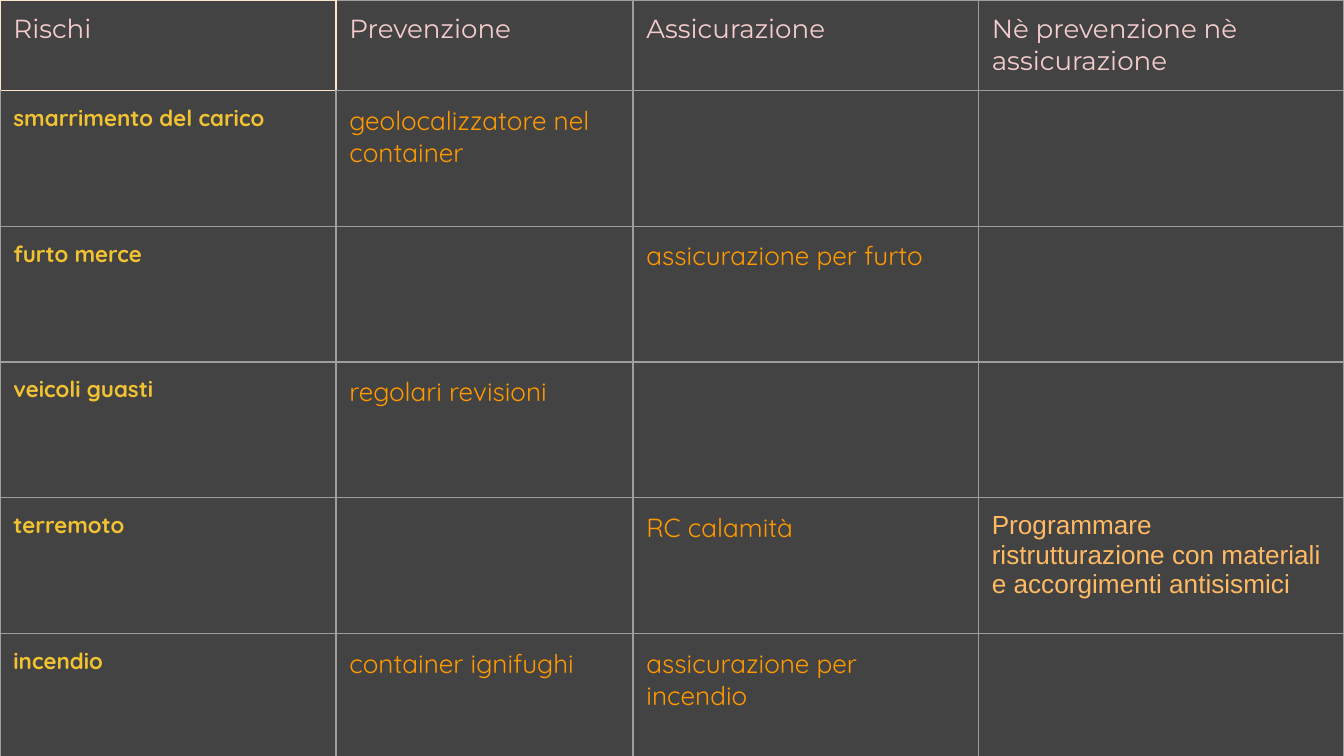
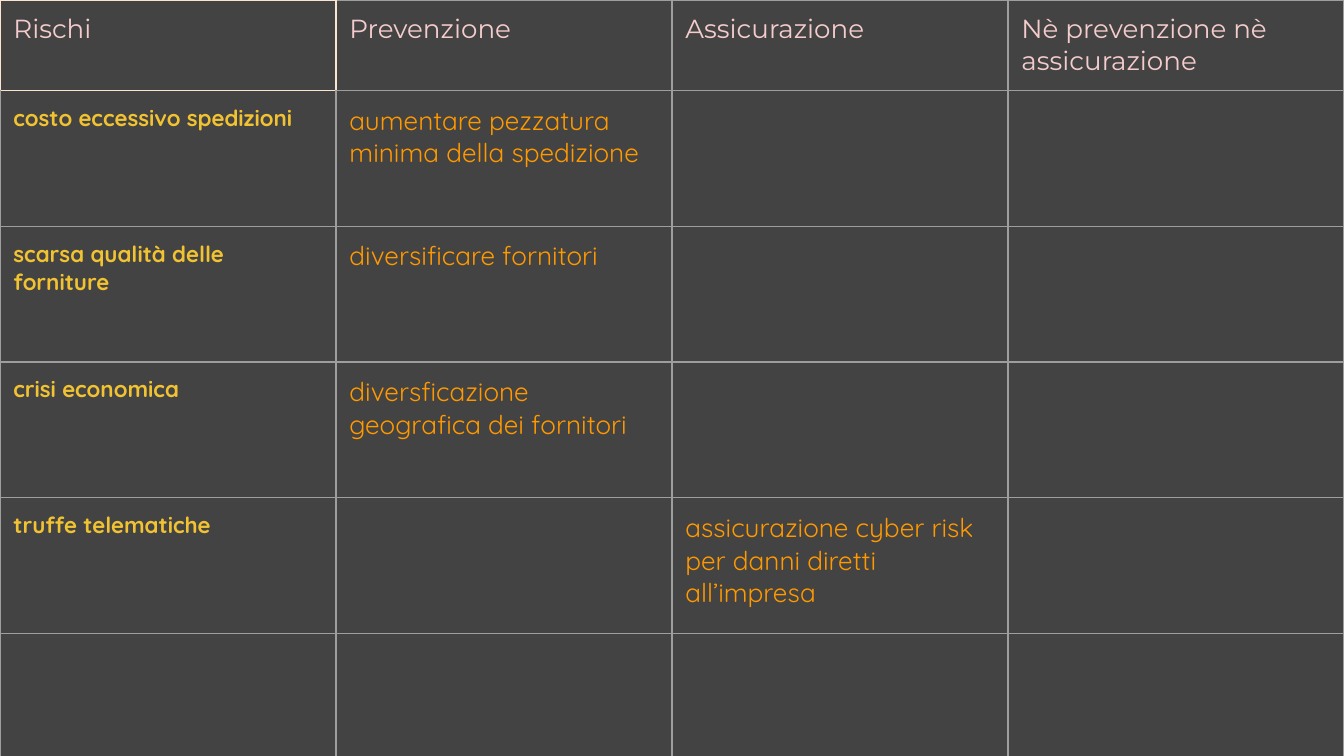
from lxml import etree
from pptx import Presentation
from pptx import util as u
from pptx.dml.color import RGBColor
from pptx.oxml import ns

# Shared look
CHARCOAL = RGBColor(0x43, 0x43, 0x43)
GREY = RGBColor(0x9E, 0x9E, 0x9E)
CREAM = RGBColor(0xFC, 0xE5, 0xCD)
PINK = RGBColor(0xF4, 0xCC, 0xCC)
GOLD = RGBColor(0xF1, 0xC2, 0x32)
ORANGE = RGBColor(0xFF, 0x99, 0x00)
APRICOT = RGBColor(0xFF, 0xBA, 0x64)

HEADING = ({"name": "Montserrat", "size": u.Pt(14), "bold": False}, PINK)
RISK = ({"name": "Quicksand", "size": u.Pt(12), "bold": True}, GOLD)
MEASURE = ({"name": "Quicksand", "size": u.Pt(14), "bold": False}, ORANGE)
NEITHER = ({"name": "Arial", "size": u.Pt(14), "bold": False}, APRICOT)
COLUMN_STYLES = (RISK, MEASURE, MEASURE, NEITHER)

SLIDE_WIDTH = u.Inches(10)
SLIDE_HEIGHT = SLIDE_WIDTH * 9 // 16
HEADER_HEIGHT = u.Inches(0.62)
RISK_HEIGHT = u.Inches(1.01)
PADDING = u.Inches(0.1)
BORDER_WIDTH = u.Pt(0.75)

# Content: risk, prevention, insurance, neither
HEADINGS = ("Rischi", "Prevenzione", "Assicurazione",
            "Nè prevenzione nè assicurazione")
LOGISTICS_RISKS = (
    ("smarrimento del carico", "geolocalizzatore nel container", "", ""),
    ("furto merce", "", "assicurazione per furto", ""),
    ("veicoli guasti", "regolari revisioni", "", ""),
    ("terremoto", "", "RC calamità",
     "Programmare ristrutturazione con materiali e accorgimenti antisismici"),
    ("incendio", "container ignifughi", "assicurazione per incendio", ""),
)
BUSINESS_RISKS = (
    ("costo eccessivo spedizioni",
     "aumentare pezzatura minima della spedizione", "", ""),
    ("scarsa qualità delle forniture", "diversificare fornitori", "", ""),
    ("crisi economica", "diversficazione geografica dei fornitori", "", ""),
    ("truffe telematiche", "",
     "assicurazione cyber risk per danni diretti all’impresa", ""),
    ("", "", "", ""),
)


def border_colors(row, column):
    """Grey everywhere, cream on the four sides of the corner cell."""
    colors = dict.fromkeys("LRTB", GREY)
    if (row, column) == (0, 0):
        colors = dict.fromkeys("LRTB", CREAM)
    elif (row, column) == (0, 1):
        colors["L"] = CREAM
    elif (row, column) == (1, 0):
        colors["T"] = CREAM
    return colors


def draw_borders(cell, colors):
    properties = cell._tc.get_or_add_tcPr()
    for position, (side, color) in enumerate(colors.items()):
        line = etree.Element(ns.qn(f"a:ln{side}"), w=str(int(BORDER_WIDTH)))
        fill = etree.SubElement(line, ns.qn("a:solidFill"))
        etree.SubElement(fill, ns.qn("a:srgbClr"), val=str(color))
        properties.insert(position, line)


def write_cell(cell, words, style):
    for side in ("left", "top", "right", "bottom"):
        setattr(cell, f"margin_{side}", PADDING)
    cell.fill.background()
    if words:
        run = cell.text_frame.paragraphs[0].add_run()
        run.text = words
        font_format, color = style
        for attribute, value in font_format.items():
            setattr(run.font, attribute, value)
        run.font.color.rgb = color


def add_risk_slide(prs, risks, column_shares):
    slide = prs.slides.add_slide(prs.slide_layouts[6])
    rows = (HEADINGS, *risks)
    heights = [HEADER_HEIGHT] + [RISK_HEIGHT] * len(risks)
    table = slide.shapes.add_table(len(rows), len(HEADINGS), 0, 0,
                                   SLIDE_WIDTH, sum(heights)).table
    table.first_row = table.horz_banding = False

    # Grid
    for column, share in zip(table.columns, column_shares):
        column.width = int(SLIDE_WIDTH * share / sum(column_shares))
    for row, height in zip(table.rows, heights):
        row.height = height

    # Cells
    for r, row_words in enumerate(rows):
        for c, words in enumerate(row_words):
            cell = table.cell(r, c)
            write_cell(cell, words, COLUMN_STYLES[c] if r else HEADING)
            draw_borders(cell, border_colors(r, c))


def main():
    prs = Presentation()
    prs.slide_width, prs.slide_height = SLIDE_WIDTH, SLIDE_HEIGHT
    background = prs.slide_master.background.fill
    background.solid()
    background.fore_color.rgb = CHARCOAL

    add_risk_slide(prs, LOGISTICS_RISKS, (2.5, 2.21, 2.57, 2.72))
    add_risk_slide(prs, BUSINESS_RISKS, (1, 1, 1, 1))
    prs.save("out.pptx")


if __name__ == "__main__":
    main()
